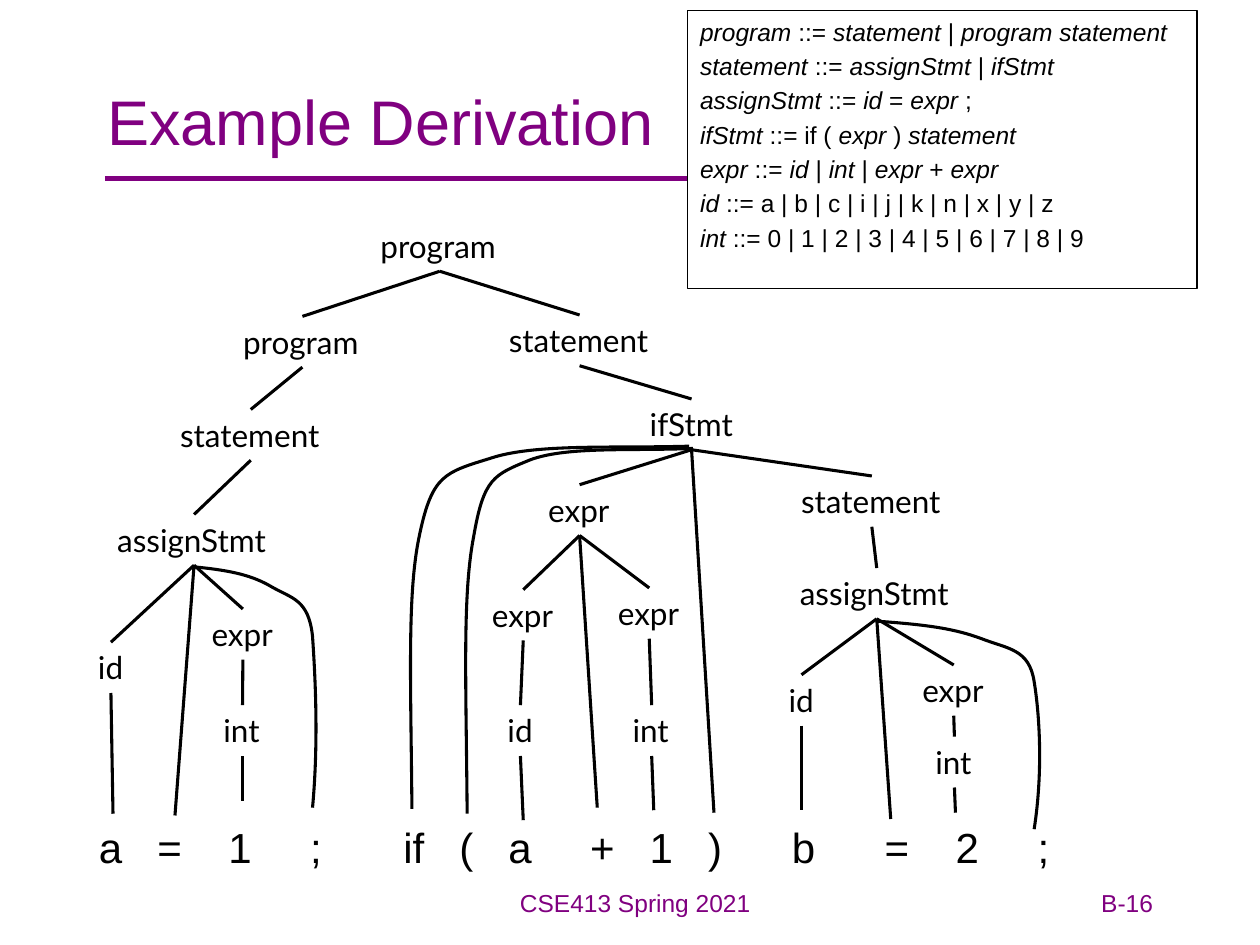
from dataclasses import dataclass
from itertools import islice

from lxml import etree
from pptx import Presentation
from pptx.dml.color import RGBColor
from pptx.enum.shapes import MSO_CONNECTOR, MSO_SHAPE
from pptx.enum.text import MSO_ANCHOR, MSO_AUTO_SIZE, PP_ALIGN
from pptx.oxml.ns import qn
from pptx.util import Pt

STRAIGHT = MSO_CONNECTOR.STRAIGHT
RECTANGLE = MSO_SHAPE.RECTANGLE
TOP, MIDDLE = MSO_ANCHOR.TOP, MSO_ANCHOR.MIDDLE
NO_FIT, GROW = MSO_AUTO_SIZE.NONE, MSO_AUTO_SIZE.SHAPE_TO_FIT_TEXT
LEFT, CENTER, RIGHT = PP_ALIGN.LEFT, PP_ALIGN.CENTER, PP_ALIGN.RIGHT
TOP_SIDE, BOTTOM_SIDE = 0, 2

PURPLE = RGBColor(0x80, 0x00, 0x80)
BLACK = RGBColor(0x00, 0x00, 0x00)
WHITE = RGBColor(0xFF, 0xFF, 0xFF)

NODE_HEIGHT = 29
EDGE_WIDTH = 1.75
NODE_WIDTHS = {"program": 82, "statement": 95, "assignStmt": 102,
               "ifStmt": 62, "expr": 50, "id": 29, "int": 36}


@dataclass(frozen=True)
class Node:
    key: str
    label: str
    center: float
    top: float
    parent: str = ""
    tokens: tuple = ()  # end points of straight edges down to the program text


# Parents come before their children
NODES = [
    Node("root", "program", 251.3, 126),
    Node("first program", "program", 172.8, 180.8, "root"),
    Node("last statement", "statement", 331.2, 180, "root"),
    Node("first statement", "statement", 143.3, 234, "first program"),
    Node("assign a", "assignStmt", 110.9, 294, "first statement", ((100, 466),)),
    Node("expr 1", "expr", 138.8, 348, "assign a"),
    Node("id a", "id", 63.4, 367, "assign a", ((64.6, 465),)),
    Node("int 1", "int", 138.6, 403, "expr 1", ((138.6, 458),)),
    Node("if", "ifStmt", 395.2, 228, "last statement", ((408, 464.4),)),
    Node("condition", "expr", 331.2, 277, "if", ((341.3, 461.5),)),
    Node("left expr", "expr", 299, 337, "condition"),
    Node("right expr", "expr", 371, 336, "condition"),
    Node("left id", "id", 297.4, 403, "left expr", ((299, 468.7),)),
    Node("right int", "int", 372.4, 403, "right expr", ((373.6, 463),)),
    Node("body", "statement", 498.2, 272, "if"),
    Node("assign b", "assignStmt", 501, 324.6, "body", ((509, 468),)),
    Node("id b", "id", 458, 385.6, "assign b", ((458, 463),)),
    Node("expr 2", "expr", 545, 380, "assign b"),
    Node("int 2", "int", 545.4, 421, "expr 2", ((546, 464.4),)),
]

# Start point, then three points for each Bézier piece
CURVES = [
    [(111.6, 324), (132.5, 326), (144.7, 329), (155.5, 335.5), (167, 342),
     (176.4, 342.7), (178.6, 363.6), (180, 384.5), (182.2, 422.6), (178.6, 461.5)],
    [(501.8, 355), (530, 357), (545.8, 359.3), (561, 365), (576, 370.8),
     (588.2, 370.8), (591, 389.5), (594, 407.5), (596.2, 440.6), (591, 473.8)],
    [(396, 256.3), (360, 257.8), (324, 255), (303, 262.8), (282.2, 271.4),
     (276.5, 273), (270.7, 306.7), (264.2, 340.6), (266.4, 388.8), (267, 465)],
    [(393.8, 255), (350, 256.3), (305.3, 253.4), (280, 262), (254.2, 270),
     (247, 271.4), (239.8, 305.3), (232.6, 338.4), (234.7, 386.6), (235.4, 462.2)],
]

# Asterisks enclose italic words
GRAMMAR = [
    "*program* ::= *statement* | *program statement*",
    "*statement* ::= *assignStmt* | *ifStmt*",
    "*assignStmt* ::= *id* = *expr* ;",
    "*ifStmt* ::= if ( *expr* ) *statement*",
    "*expr* ::= *id* | *int* | *expr* + *expr*",
    "*id* ::= a | b | c | i | j | k | n | x | y | z",
    "*int* ::= 0 | 1 | 2 | 3 | 4 | 5 | 6 | 7 | 8 | 9",
]

TOKENS = ["a", "=", "1", ";", "if", "(", "a", "+", "1", ")", "b", "=", "2", ";"]
TOKEN_STOPS = [33.4, 74, 120.8, 174, 206, 234, 280.8, 314.8, 348.2, 396,
               449, 489.6, 536.4]


def format_runs(paragraph, size: float, color: RGBColor, name: str = "Arial") -> None:
    for run in paragraph.runs:
        run.font.size = Pt(size)
        run.font.name = name
        run.font.color.rgb = color


def add_text(slide, text: str, left: float, top: float, width: float, height: float,
             size: float, color: RGBColor, alignment=LEFT, name: str = "Arial"):
    shape = slide.shapes.add_textbox(Pt(left), Pt(top), Pt(width), Pt(height))
    shape.text_frame.word_wrap = True
    shape.text_frame.text = text
    paragraph = shape.text_frame.paragraphs[0]
    paragraph.alignment = alignment
    format_runs(paragraph, size, color, name)
    return shape


def add_line(slide, start: tuple, end: tuple, color: RGBColor = BLACK,
             width: float = EDGE_WIDTH):
    line = slide.shapes.add_connector(STRAIGHT, *map(Pt, start), *map(Pt, end))
    line.line.color.rgb = color
    line.line.width = Pt(width)
    etree.SubElement(line._element.spPr, qn("a:effectLst"))
    return line


def add_node(slide, node: Node, shapes: dict) -> None:
    width = NODE_WIDTHS[node.label]
    shape = add_text(slide, node.label, node.center - width / 2, node.top, width,
                     NODE_HEIGHT, 18, BLACK, LEFT, "Lato")
    shape.text_frame.word_wrap = False
    shape.text_frame.auto_size = GROW
    shapes[node.key] = shape
    bottom = (node.center, node.top + NODE_HEIGHT)
    if node.parent:
        edge = add_line(slide, (node.center, node.top), (node.center, node.top))
        edge.begin_connect(shapes[node.parent], BOTTOM_SIDE)
        edge.end_connect(shape, TOP_SIDE)
    for token in node.tokens:
        add_line(slide, bottom, token).begin_connect(shape, BOTTOM_SIDE)


def add_curve(slide, points: list) -> None:
    start, *others = [(Pt(x), Pt(y)) for x, y in points]
    builder = slide.shapes.build_freeform(*start)
    builder.add_line_segments(others, close=False)
    shape = builder.convert_to_shape()
    shape.shadow.inherit = False
    shape.fill.background()
    shape.line.color.rgb = BLACK
    shape.line.width = Pt(EDGE_WIDTH)
    # Turn every three line segments into one cubic piece
    outline = next(shape._element.iter(qn("a:path")))
    segments = iter(outline.findall(qn("a:lnTo")))
    while piece := list(islice(segments, 3)):
        cubic = etree.SubElement(outline, qn("a:cubicBezTo"))
        for segment in piece:
            cubic.append(segment[0])
            outline.remove(segment)


def add_title(slide) -> None:
    add_line(slide, (60, 102), (654, 102), PURPLE, 3)
    title = slide.shapes.title
    title.left, title.top, title.width, title.height = map(Pt, (54, 24, 612, 90))
    frame = title.text_frame
    frame.text = "Example Derivation"
    frame.vertical_anchor = MIDDLE
    frame.auto_size = NO_FIT
    frame.paragraphs[0].alignment = LEFT
    format_runs(frame.paragraphs[0], 36, PURPLE)


def add_grammar(slide) -> None:
    box = slide.shapes.add_shape(RECTANGLE, *map(Pt, (393, 6, 291, 159)))
    box.shadow.inherit = False
    box.fill.solid()
    box.fill.fore_color.rgb = WHITE
    box.line.color.rgb = BLACK
    box.line.width = Pt(0.75)
    frame = box.text_frame
    frame.vertical_anchor = TOP
    for index, rule in enumerate(GRAMMAR):
        paragraph = frame.add_paragraph() if index else frame.paragraphs[0]
        paragraph.alignment = LEFT
        paragraph.space_before = Pt(2.8 if index else 0)
        for position, part in enumerate(rule.split("*")):
            if part:
                run = paragraph.add_run()
                run.text = part
                run.font.italic = position % 2 == 1
        format_runs(paragraph, 14, BLACK)


def add_program_text(slide) -> None:
    shape = add_text(slide, "\t".join(TOKENS), 36, 466, 648, 62.6, 24, BLACK)
    shape.text_frame.margin_left = Pt(20.5)
    properties = shape.text_frame.paragraphs[0]._p.get_or_add_pPr()
    tabs = etree.SubElement(properties, qn("a:tabLst"))
    for stop in TOKEN_STOPS:
        etree.SubElement(tabs, qn("a:tab"), pos=str(Pt(stop)), algn="l")


def main() -> None:
    presentation = Presentation()
    presentation.slide_width, presentation.slide_height = Pt(720), Pt(540)
    slide = presentation.slides.add_slide(presentation.slide_layouts[5])

    # Title, program text and footer
    add_title(slide)
    add_program_text(slide)
    add_text(slide, "CSE413 Spring 2021", 228, 504, 270, 36, 14, PURPLE, CENTER)
    add_text(slide, "B-16", 516, 504, 150, 36, 14, PURPLE, RIGHT)

    # Grammar rules
    add_grammar(slide)

    # Parse tree
    shapes = {}
    for node in NODES:
        add_node(slide, node, shapes)
    for points in CURVES:
        add_curve(slide, points)

    presentation.save("out.pptx")


if __name__ == "__main__":
    main()
